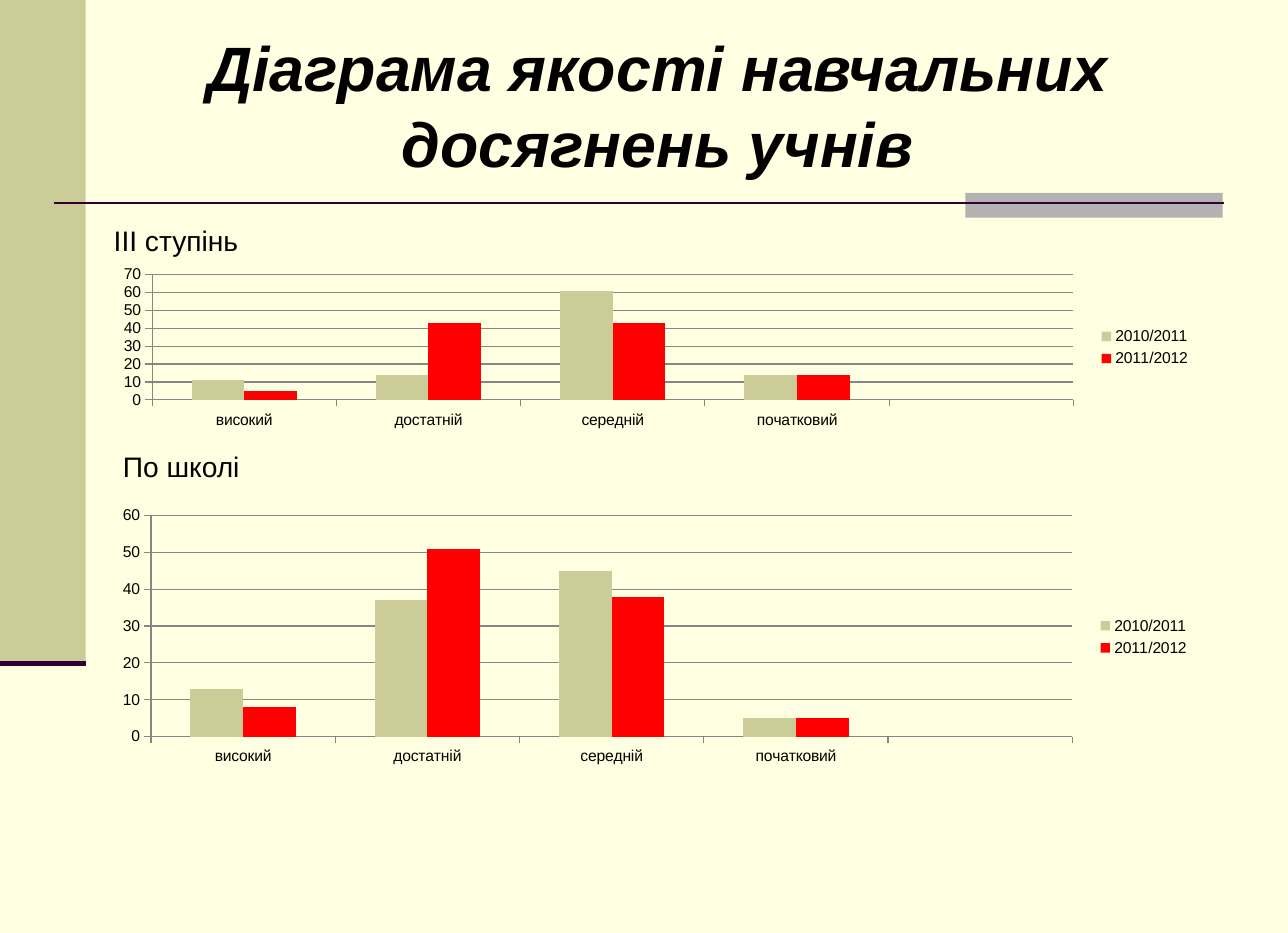
from lxml import etree
from pptx import Presentation
from pptx.chart.data import CategoryChartData
from pptx.dml.color import RGBColor
from pptx.enum.chart import XL_CHART_TYPE as CT, XL_LEGEND_POSITION as LP, XL_TICK_MARK as TM
from pptx.enum.shapes import MSO_CONNECTOR as MC, MSO_SHAPE as MS
from pptx.enum.text import MSO_ANCHOR as MA, PP_ALIGN as PA
from pptx.oxml import parse_xml
from pptx.oxml.ns import nsdecls, qn
from pptx.util import Inches, Pt

CREAM = RGBColor(0xFF, 0xFF, 0xE1)
KHAKI = RGBColor(0xCC, 0xCC, 0x99)
GRAY = RGBColor(0xB2, 0xB2, 0xB2)
PLUM = RGBColor(0x33, 0x00, 0x33)
RED = RGBColor(0xFF, 0x00, 0x00)
BLACK = RGBColor(0x00, 0x00, 0x00)
AXIS = RGBColor(0x86, 0x86, 0x86)
FONT = "Arial"

prs = Presentation()
prs.slide_width, prs.slide_height = Inches(11.42), Inches(8.27)
s = prs.slides.add_slide(prs.slide_layouts[6])
s.background.fill.solid()
s.background.fill.fore_color.rgb = CREAM


def add_text(text, x, y, w, h, size=18, bold=False, italic=False,
             align=PA.LEFT, anchor=MA.TOP, wrap=False):
    tf = s.shapes.add_textbox(Inches(x), Inches(y), Inches(w), Inches(h)).text_frame
    tf.word_wrap = wrap
    tf.vertical_anchor = anchor
    p = tf.paragraphs[0]
    p.alignment = align
    r = p.add_run()
    r.text = text
    r.font.name, r.font.size = FONT, Pt(size)
    r.font.bold, r.font.italic = bold, italic
    r.font.color.rgb = BLACK


def add_column_chart(x, y, w, h, series, plot_y, plot_h):
    data = CategoryChartData()
    # The last category is an empty slot
    data.categories = ["високий", "достатній", "середній", "початковий", ""]
    for name, values in series.items():
        data.add_series(name, values + [None])
    chart = s.shapes.add_chart(CT.COLUMN_CLUSTERED, Inches(x), Inches(y),
                               Inches(w), Inches(h), data).chart
    chart.has_title = False
    chart.font.name, chart.font.size = FONT, Pt(10)
    chart.font.color.rgb = BLACK
    chart.has_legend = True
    chart.legend.position = LP.RIGHT
    chart.legend.include_in_layout = False

    plot = chart.plots[0]
    plot.gap_width, plot.overlap = 150, 0
    plot.vary_by_categories = False
    for ser, color in zip(plot.series, (KHAKI, RED)):
        ser.format.fill.solid()
        ser.format.fill.fore_color.rgb = color

    axes = chart.category_axis, chart.value_axis
    for axis in axes:
        axis.major_tick_mark, axis.minor_tick_mark = TM.OUTSIDE, TM.NONE
    chart.value_axis.has_major_gridlines = True
    chart.value_axis.major_unit = 10
    chart.value_axis.minimum_scale = 0
    for line in [a.format.line for a in axes] + [chart.value_axis.major_gridlines.format.line]:
        line.color.rgb = AXIS
        line.width = Pt(0.75)

    # Inner plot area as fractions of the chart
    area = chart.plots[0]._element.getparent()
    for old in area.findall(qn("c:layout")):
        area.remove(old)
    bounds = {"x": 0.045, "y": plot_y, "w": 0.838, "h": plot_h}
    layout = parse_xml(f'<c:layout {nsdecls("c")}><c:manualLayout>'
                       '<c:layoutTarget val="inner"/><c:xMode val="edge"/><c:yMode val="edge"/>'
                       + "".join(f'<c:{k} val="{v}"/>' for k, v in bounds.items())
                       + '</c:manualLayout></c:layout>')
    area.insert(0, layout)


# Side band and accent block
for x, y, w, h, color in [(0, 0, 0.76, 5.88, KHAKI), (8.56, 1.71, 2.28, 0.22, GRAY)]:
    sp = s.shapes.add_shape(MS.RECTANGLE, Inches(x), Inches(y), Inches(w), Inches(h))
    sp.shadow.inherit = False
    sp.fill.solid()
    sp.fill.fore_color.rgb = color
    sp.line.fill.background()

# Rules under the title and the side band
for x1, x2, y, width in [(0.48, 10.85, 1.8, 1.5), (0, 0.76, 5.88, 3.5)]:
    rule = s.shapes.add_connector(MC.STRAIGHT, Inches(x1), Inches(y), Inches(x2), Inches(y))
    rule.line.color.rgb = PLUM
    rule.line.width = Pt(width)
    etree.SubElement(rule._element.spPr, qn("a:effectLst"))

# Title
add_text("Діаграма якості навчальних досягнень учнів", 0.67, 0.2, 10.32, 1.45,
         size=40, bold=True, italic=True, align=PA.CENTER, anchor=MA.MIDDLE, wrap=True)

# Upper school results
add_text("ІІІ ступінь", 0.91, 1.93, 1.32, 0.4)
add_column_chart(0.91, 2.33, 9.75, 1.5,
                 {"2010/2011": [11, 14, 61, 14], "2011/2012": [5, 43, 43, 14]},
                 plot_y=0.07, plot_h=0.74)

# Whole school results
add_text("По школі", 0.99, 3.93, 1.25, 0.4)
add_column_chart(0.9, 4.45, 9.75, 2.39,
                 {"2010/2011": [13, 37, 45, 5], "2011/2012": [8, 51, 38, 5]},
                 plot_y=0.05, plot_h=0.82)

prs.save("out.pptx")
